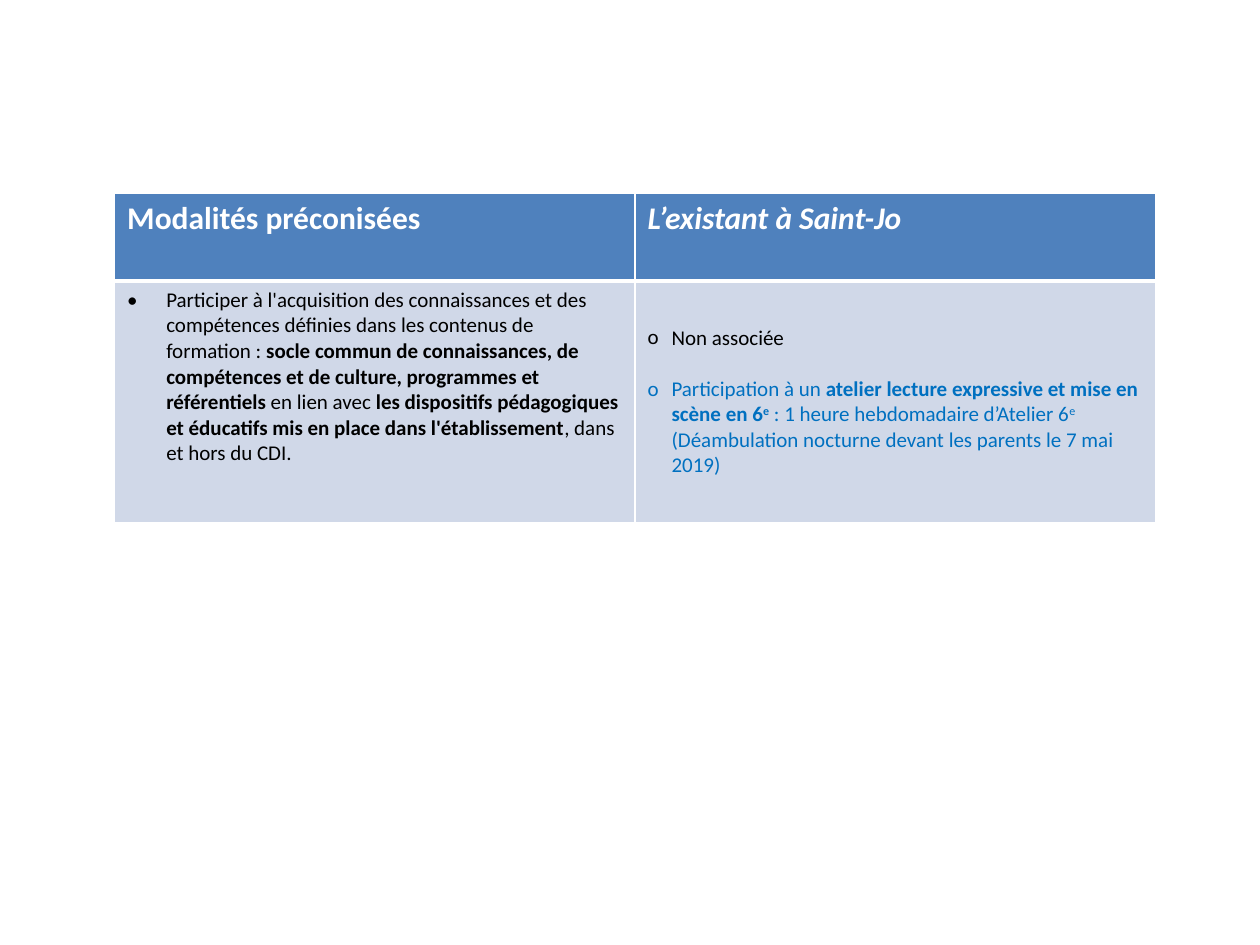
from lxml import etree
from pptx import Presentation
from pptx.dml.color import RGBColor
from pptx.enum.text import MSO_ANCHOR
from pptx.oxml.ns import qn
from pptx.util import Inches, Pt

TOP = MSO_ANCHOR.TOP
COLORS = {
    "header": "4F81BD",
    "body": "D0D8E8",
    "white": "FFFFFF",
    "black": "000000",
    "blue": "0070C0",
}
HEADER = {"size": Pt(18), "bold": True}
HEADER_ITALIC = {**HEADER, "italic": True}
PLAIN = {"size": Pt(12), "bold": False}
BOLD = {**PLAIN, "bold": True}

RECOMMENDED = [
    ("Participer à l'acquisition des connaissances et des compétences "
     "définies dans les contenus de formation : ", PLAIN),
    ("socle commun de connaissances, de compétences et de culture, "
     "programmes et référentiels", BOLD),
    (" en lien avec ", PLAIN),
    ("les dispositifs pédagogiques et éducatifs mis en place dans "
     "l'établissement", BOLD),
    (", dans et hors du CDI.", PLAIN),
]
NOT_ASSOCIATED = [("Non associée", PLAIN)]
WORKSHOP = [
    ("Participation à un ", PLAIN),
    ("atelier lecture expressive et mise en scène en 6", BOLD),
    ("e", BOLD, True),
    (" : 1 heure hebdomadaire d’Atelier 6", PLAIN),
    ("e", PLAIN, True),
    (" (Déambulation nocturne devant les parents le 7 mai 2019)", PLAIN),
]


def add_run(paragraph, text, formats, color, superscript=False):
    run = paragraph.add_run()
    run.text = text
    run.font.name = "Calibri"
    run.font.color.rgb = RGBColor.from_string(COLORS[color])
    for attribute, value in formats.items():
        setattr(run.font, attribute, value)
    if superscript:
        run.font._element.set("baseline", "30000")


def write_paragraph(paragraph, runs, color):
    for run in runs:
        add_run(paragraph, *run[:2], color, *run[2:])


def set_bullet(paragraph, symbol, indent):
    properties = paragraph._p.get_or_add_pPr()
    properties.set("marL", str(Inches(indent)))
    properties.set("indent", str(-Inches(indent)))
    etree.SubElement(properties, qn("a:buFont")).set("typeface", "Calibri")
    etree.SubElement(properties, qn("a:buChar")).set("char", symbol)


def set_borders(cell, **widths):
    properties = cell._tc.get_or_add_tcPr()
    for position, side in enumerate("LRTB"):
        line = etree.Element(qn(f"a:ln{side}"), w=str(Pt(widths.get(side, 1))))
        fill = etree.SubElement(line, qn("a:solidFill"))
        etree.SubElement(fill, qn("a:srgbClr")).set("val", COLORS["white"])
        properties.insert(position, line)


def style_cell(cell, fill, **borders):
    cell.fill.solid()
    cell.fill.fore_color.rgb = RGBColor.from_string(COLORS[fill])
    cell.vertical_anchor = TOP
    set_borders(cell, **borders)


def add_comparison(slide):
    table = slide.shapes.add_table(
        2, 2, Inches(0.91), Inches(1.53), Inches(8.26), Inches(2.62)).table
    for column in table.columns:
        column.width = Inches(4.13)
    for row, height in zip(table.rows, (0.7, 1.92)):
        row.height = Inches(height)
    for column in range(2):
        style_cell(table.cell(0, column), "header", B=3)
        style_cell(table.cell(1, column), "body", T=3)
    return table


def fill_headings(table):
    headings = (("Modalités préconisées", HEADER),
                ("L’existant à Saint-Jo", HEADER_ITALIC))
    for column, heading in enumerate(headings):
        paragraph = table.cell(0, column).text_frame.paragraphs[0]
        write_paragraph(paragraph, [heading], "white")


def fill_practices(table):
    recommended = table.cell(1, 0).text_frame.paragraphs[0]
    existing_cell = table.cell(1, 1)
    existing_cell.margin_top = Inches(0.35)
    not_associated = existing_cell.text_frame.paragraphs[0]
    workshop = existing_cell.text_frame.add_paragraph()
    workshop.space_before = Pt(14.6)
    for paragraph, runs, color, symbol, indent in (
        (recommended, RECOMMENDED, "black", "•", 0.31),
        (not_associated, NOT_ASSOCIATED, "black", "o", 0.19),
        (workshop, WORKSHOP, "blue", "o", 0.19),
    ):
        set_bullet(paragraph, symbol, indent)
        write_paragraph(paragraph, runs, color)


def main():
    presentation = Presentation()
    presentation.slide_width = Inches(10)
    presentation.slide_height = Inches(7.5)
    slide = presentation.slides.add_slide(presentation.slide_layouts[6])
    table = add_comparison(slide)
    fill_headings(table)
    fill_practices(table)
    presentation.save("out.pptx")


if __name__ == "__main__":
    main()
